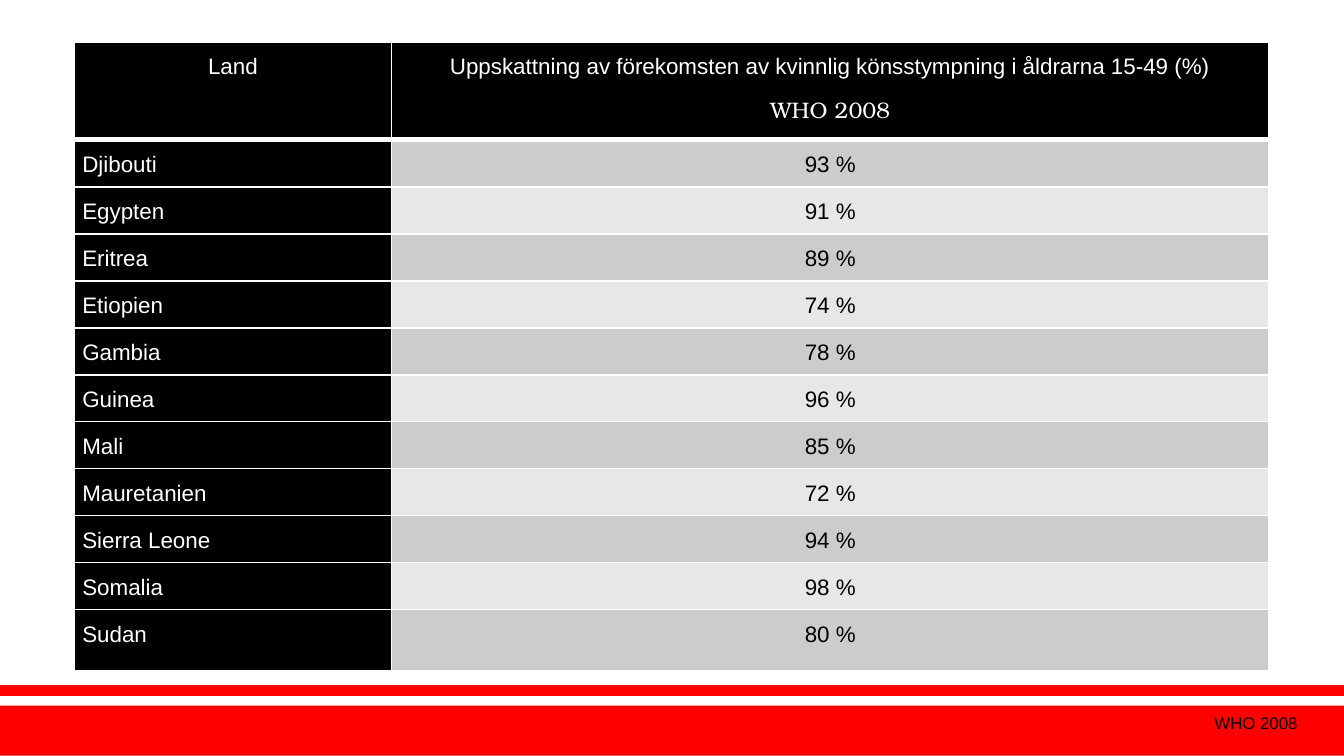
from dataclasses import dataclass

from lxml import etree
from pptx import Presentation
from pptx.dml.color import RGBColor
from pptx.enum.shapes import MSO_SHAPE
from pptx.enum.text import MSO_ANCHOR, MSO_AUTO_SIZE, PP_ALIGN
from pptx.oxml.ns import qn
from pptx.util import Pt

RECT = MSO_SHAPE.RECTANGLE
TOP = MSO_ANCHOR.TOP
FIT = MSO_AUTO_SIZE.SHAPE_TO_FIT_TEXT
LEFT = PP_ALIGN.LEFT
MID = PP_ALIGN.CENTER


@dataclass(frozen=True)
class Theme:
    black: str = "000000"
    white: str = "FFFFFF"
    red: str = "FF0000"
    dark: str = "CCCCCC"
    light: str = "E7E7E7"
    sans: str = "Arial"
    serif: str = "TeX Gyre Bonum"
    body: float = 12
    small: float = 9


THEME = Theme()


@dataclass(frozen=True)
class Line:
    text: str
    color: str
    font: str = THEME.sans
    size: float = THEME.body


@dataclass(frozen=True)
class Band:
    left: float
    top: float
    high: float


@dataclass(frozen=True)
class Rate:
    land: str
    share: int


BANDS = [Band(-25.2, 378, 26.8), Band(-25.8, 367, 5.8)]
HEAD = [
    Line("Uppskattning av förekomsten av kvinnlig könsstympning i åldrarna 15-49 (%)", THEME.white),
    Line("WHO 2008", THEME.white, THEME.serif),
]
RATES = [
    Rate("Djibouti", 93),
    Rate("Egypten", 91),
    Rate("Eritrea", 89),
    Rate("Etiopien", 74),
    Rate("Gambia", 78),
    Rate("Guinea", 96),
    Rate("Mali", 85),
    Rate("Mauretanien", 72),
    Rate("Sierra Leone", 94),
    Rate("Somalia", 98),
    Rate("Sudan", 80),
]


def write(para, line: Line) -> None:
    run = para.add_run()
    run.text = line.text
    font = run.font
    font.name = line.font
    font.size = Pt(line.size)
    font.bold = False
    font.color.rgb = RGBColor.from_string(line.color)


def draw_band(slide, band: Band) -> None:
    shape = slide.shapes.add_shape(RECT, Pt(band.left), Pt(band.top), Pt(960), Pt(band.high))
    shape.shadow.inherit = False
    shape.fill.solid()
    shape.fill.fore_color.rgb = RGBColor.from_string(THEME.red)
    shape.line.fill.background()


def edge(cell, side: str, width: float) -> None:
    props = cell._tc.get_or_add_tcPr()
    line = etree.SubElement(props, qn("a:ln" + side), w=str(Pt(width)))
    fill = etree.SubElement(line, qn("a:solidFill"))
    etree.SubElement(fill, qn("a:srgbClr"), val=THEME.white)


def fill_cell(cell, lines: list[Line], color: str, align: PP_ALIGN, base: float = 1) -> None:
    for side in "LRT":
        edge(cell, side, 1)
    edge(cell, "B", base)
    cell.fill.solid()
    cell.fill.fore_color.rgb = RGBColor.from_string(color)
    cell.margin_left = cell.margin_right = Pt(4.3)
    cell.margin_top = cell.margin_bottom = 0
    cell.vertical_anchor = TOP
    frame = cell.text_frame
    for i, line in enumerate(lines):
        para = frame.add_paragraph() if i else frame.paragraphs[0]
        para.alignment = align
        para.line_spacing = 1.5
        write(para, line)


def draw_table(slide, rates: list[Rate]) -> None:
    highs = [52.4] + [25.18] * (len(rates) - 1) + [33]
    frame = slide.shapes.add_table(len(highs), 2, Pt(39.8), Pt(22.5), Pt(640), Pt(sum(highs)))
    table = frame.table
    for col, wide in zip(table.columns, (170, 470)):
        col.width = Pt(wide)
    for row, high in zip(table.rows, highs):
        row.height = Pt(high)
    fill_cell(table.cell(0, 0), [Line("Land", THEME.white)], THEME.black, MID, 3)
    fill_cell(table.cell(0, 1), HEAD, THEME.black, MID, 3)
    for i, rate in enumerate(rates, 1):
        shade = THEME.dark if i % 2 else THEME.light
        fill_cell(table.cell(i, 0), [Line(rate.land, THEME.white)], THEME.black, LEFT)
        fill_cell(table.cell(i, 1), [Line(f"{rate.share} %", THEME.black)], shade, MID)


def draw_source(slide, line: Line) -> None:
    frame = slide.shapes.add_textbox(Pt(643.5), Pt(378), Pt(109.5), Pt(18)).text_frame
    frame.word_wrap = True
    frame.auto_size = FIT
    write(frame.paragraphs[0], line)


def main() -> None:
    deck = Presentation()
    deck.slide_width = Pt(720)
    deck.slide_height = Pt(405)
    slide = deck.slides.add_slide(deck.slide_layouts[6])
    for band in BANDS:
        draw_band(slide, band)
    draw_table(slide, RATES)
    draw_source(slide, Line("WHO 2008", THEME.black, size=THEME.small))
    deck.save("out.pptx")


if __name__ == "__main__":
    main()
